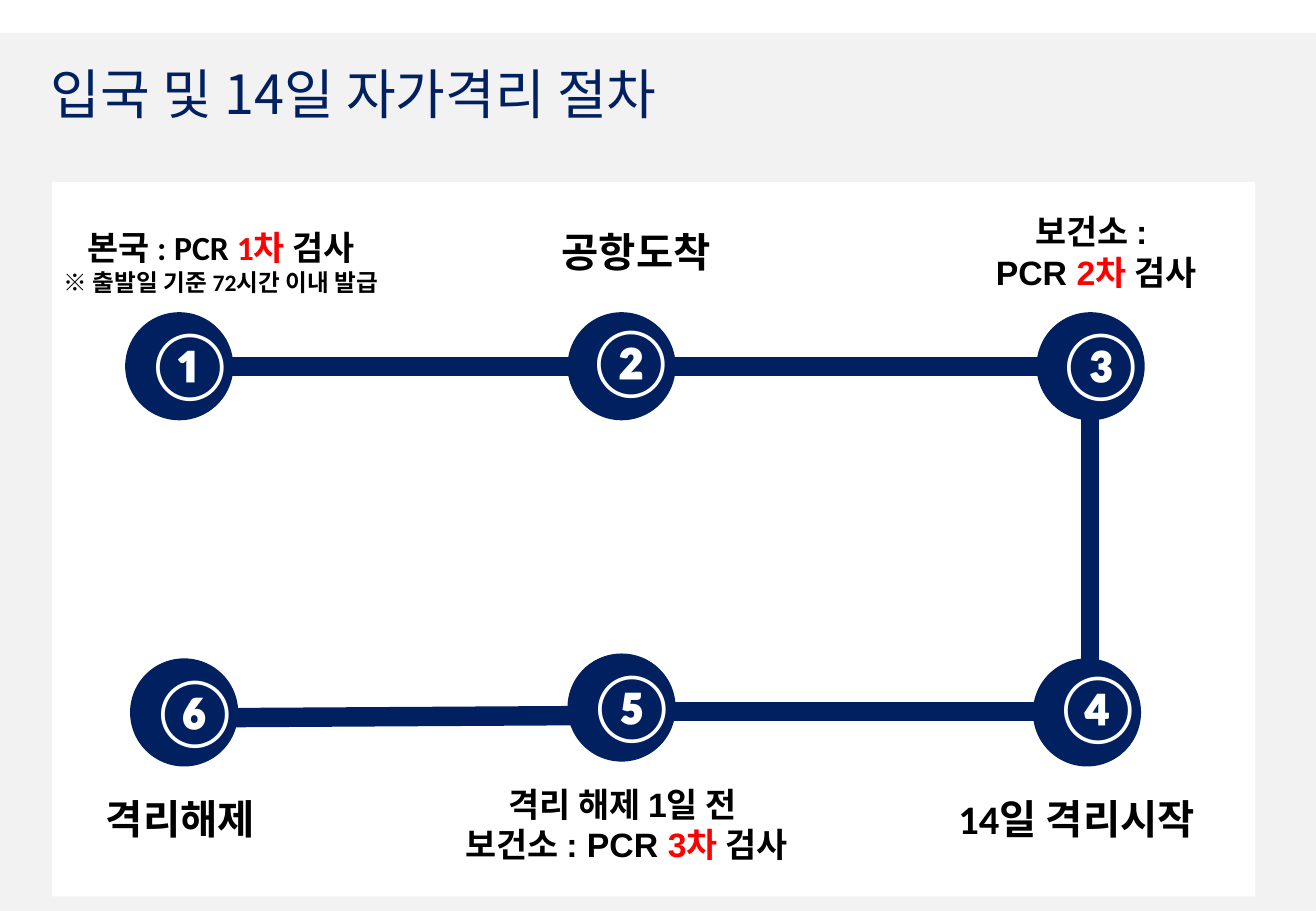
from lxml import etree
from pptx import Presentation
from pptx import util as u
from pptx.dml.color import RGBColor
from pptx.enum import shapes, text
from pptx.oxml.ns import qn

PX = 9144  # 100 px to the inch
NAVY = RGBColor(0x00, 0x20, 0x60)
RED = RGBColor(0xFF, 0x00, 0x00)
BLACK = RGBColor(0x00, 0x00, 0x00)
WHITE = RGBColor(0xFF, 0xFF, 0xFF)
GREY = RGBColor(0xF2, 0xF2, 0xF2)
KOREAN = "Noto Sans CJK KR"
CIRCLE = 89
BADGE = (76, 77)

# Content: panels as (box, fill)
PANELS = [((0, 27, 1083, 723), GREY), ((43, 150, 990, 588), WHITE)]
TITLE = ((32, 45, 581, 64), [(32, [("입국 및 14일 자가격리 절차", NAVY)])])

# Steps: number, circle corner, number corner
STEPS = [
    ("①", (103, 257), (110, 259)),
    ("②", (467, 257), (473, 257)),
    ("③", (853, 257), (860, 259)),
    ("④", (850, 542), (857, 542)),
    ("⑤", (467, 538), (474, 541)),
    ("⑥", (107, 542), (114, 545)),
]

# Labels: box, font, lines of (size, [(words, colour)])
LABELS = [
    ((35, 182, 294, 67), "Calibri", [
        (20, [("본국 : PCR ", BLACK), ("1차 ", RED), ("검사", BLACK)]),
        (14, [("※ 출발일 기준 72시간 이내 발급", BLACK)])]),
    ((440, 182, 167, 54), "Calibri", [(24, [("공항도착", BLACK)])]),
    ((805, 169, 194, 77), "Arial", [
        (20, [("보건소 : ", BLACK)]),
        (20, [("PCR ", BLACK), ("2차", RED), (" 검사", BLACK)])]),
    ((771, 649, 230, 50), "Calibri", [(24, [("14일 격리시작", BLACK)])]),
    ((363, 640, 305, 77), "Arial", [
        (20, [("격리 해제 1일 전 ", BLACK)]),
        (20, [("보건소 : PCR ", BLACK), ("3차", RED), (" 검사", BLACK)])]),
    ((71, 649, 155, 50), "Calibri", [(24, [("격리해제", BLACK)])]),
]

# Path: the long bend through steps 1 to 5, then the last leg to step 6
BEND = ((139, 302), (523, 586))
BEND_X = 897
LAST_LEG = ((504, 589), (159, 591))


def emu(lengths):
    return [length * PX for length in lengths]


def add_filled(kind, box, fill):
    panel = slide.shapes.add_shape(kind, *emu(box))
    panel.shadow.inherit = False
    panel.fill.solid()
    panel.fill.fore_color.rgb = fill
    panel.line.fill.background()


def add_leg(kind, ends, width):
    leg = slide.shapes.add_connector(kind, *emu(ends[0] + ends[1]))
    leg.line.color.rgb = NAVY
    leg.line.width = u.Pt(width)
    etree.SubElement(leg._element.spPr, qn("a:effectLst"))
    return leg


def add_words(box, lines, font, bold=True, east_asian=KOREAN,
              align=text.PP_ALIGN.CENTER):
    frame = slide.shapes.add_textbox(*emu(box)).text_frame
    frame.word_wrap = False
    frame.auto_size = text.MSO_AUTO_SIZE.SHAPE_TO_FIT_TEXT
    for i, (size, parts) in enumerate(lines):
        line = frame.add_paragraph() if i else frame.paragraphs[0]
        line.alignment = align
        for words, colour in parts:
            run = line.add_run()
            run.text = words
            run.font.size = u.Pt(size)
            run.font.bold = bold
            run.font.color.rgb = colour
            run.font.name = font
            if east_asian:
                etree.SubElement(run.font._element, qn("a:ea"),
                                 typeface=east_asian)


deck = Presentation()
deck.slide_width, deck.slide_height = emu((1083, 750))
slide = deck.slides.add_slide(deck.slide_layouts[6])

# Background and title
for box, fill in PANELS:
    add_filled(shapes.MSO_SHAPE.RECTANGLE, box, fill)
add_words(*TITLE, KOREAN, bold=False, align=text.PP_ALIGN.LEFT)

# Path
add_leg(shapes.MSO_CONNECTOR.STRAIGHT, LAST_LEG, 11.5)
bend = add_leg(shapes.MSO_CONNECTOR.ELBOW, BEND, 11.25)
(start_x, _), (end_x, _) = BEND
ratio = round((BEND_X - start_x) / (end_x - start_x) * 100000)
adjustments = bend._element.spPr.find(qn("a:prstGeom")).get_or_add_avLst()
etree.SubElement(adjustments, qn("a:gd"), name="adj1", fmla=f"val {ratio}")

# Numbered steps
for number, circle, badge in STEPS:
    add_filled(shapes.MSO_SHAPE.OVAL, circle + (CIRCLE, CIRCLE), NAVY)
    add_words(badge + BADGE, [(40, [(number, WHITE)])], "Calibri",
              east_asian=None, align=text.PP_ALIGN.LEFT)

# Step labels
for box, font, lines in LABELS:
    add_words(box, lines, font)

deck.save("out.pptx")
